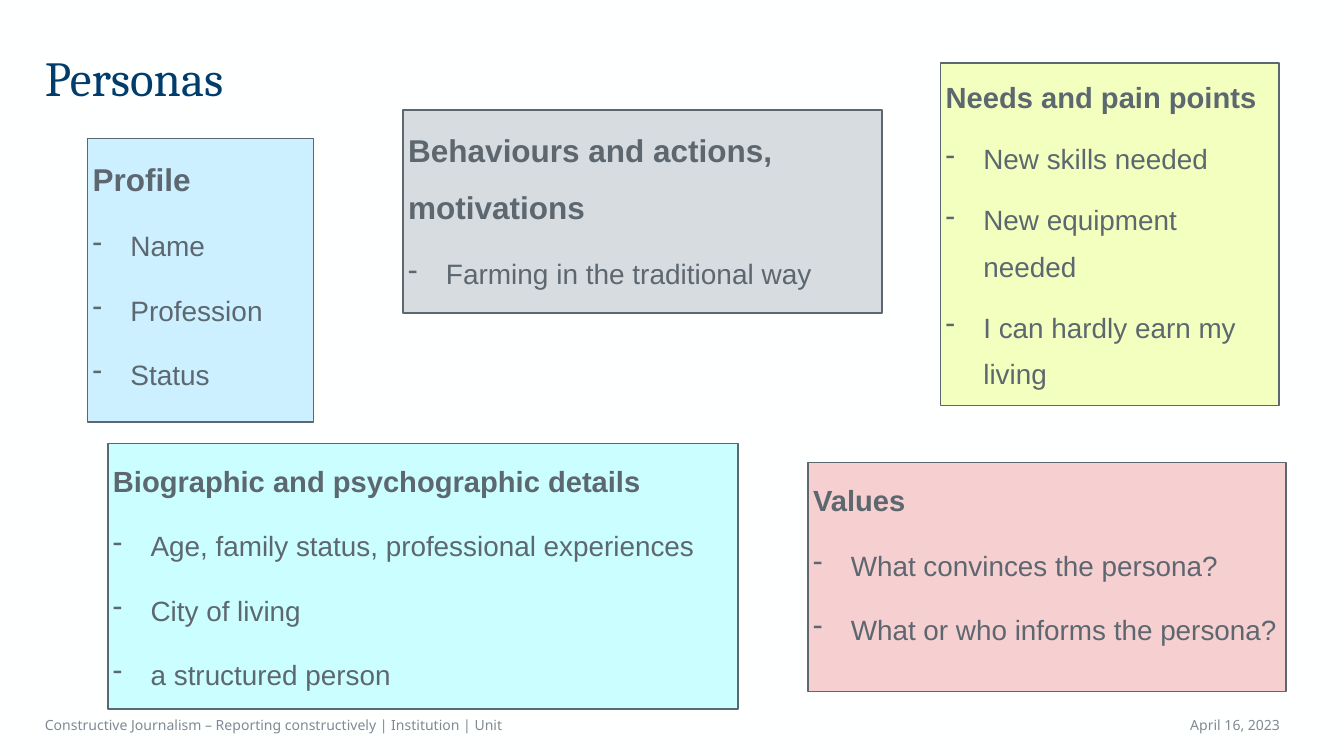
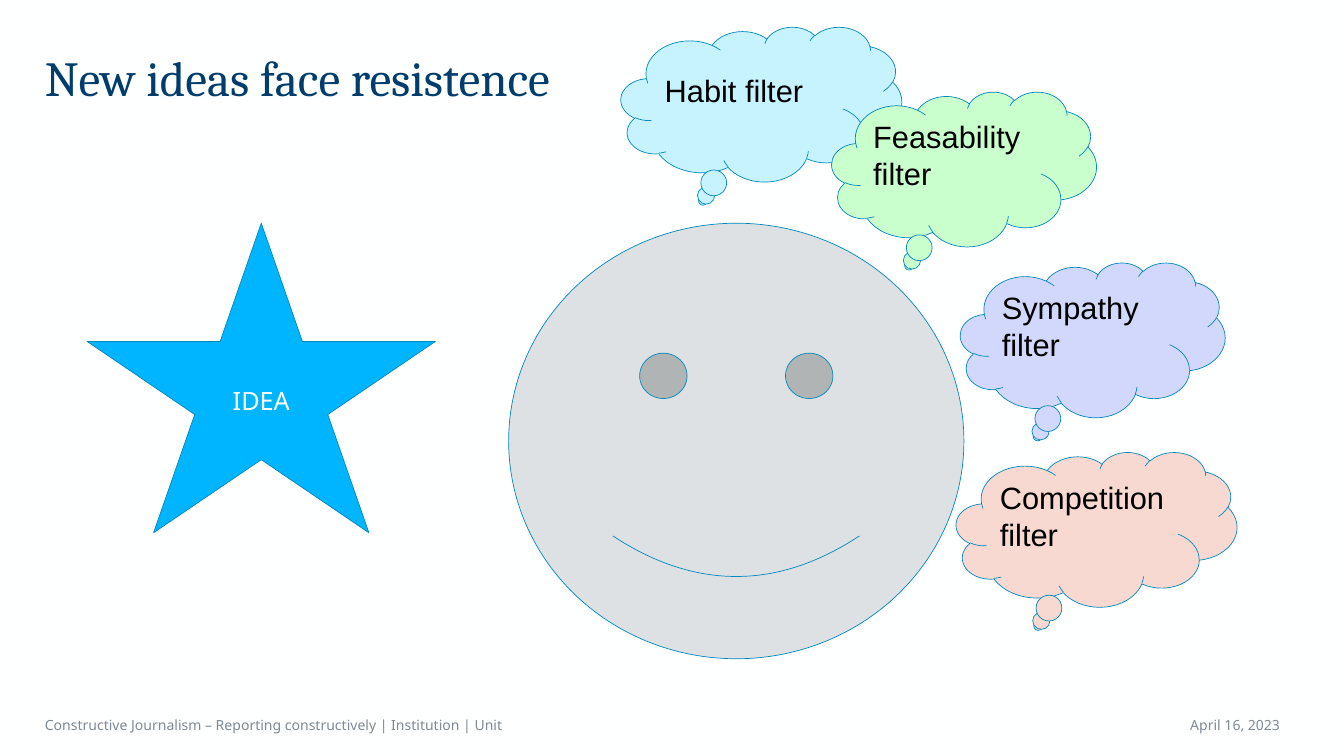
"""Build two workshop slides: persona cards and the filters that new ideas meet."""
from dataclasses import dataclass

from lxml.etree import SubElement
from pptx import Presentation
from pptx.dml.color import RGBColor
from pptx.enum.shapes import MSO_SHAPE as Preset
from pptx.enum.text import MSO_ANCHOR as Anchor, PP_ALIGN as Align
from pptx.oxml.ns import qn
from pptx.util import Cm, Pt


@dataclass(frozen=True)
class Theme:
    paper: str = "FEFFFF"
    navy: str = "003D6D"
    slate: str = "5D676F"
    muted: str = "808A93"
    blue: str = "00B5FF"
    outline: str = "0086BD"
    face: str = "DEE1E3"
    black: str = "000000"
    serif: str = "Cambria"
    sans: str = "Arial"
    humanist: str = "Noto Sans"
    title_size: float = 70
    title_leading: float = 91
    footer_size: float = 20
    idea_size: float = 36
    filter_size: float = 44
    large_card: tuple = (45, 40)
    small_card: tuple = (41.6, 39.8)
    card_line: float = 2.25
    figure_line: float = 1


THEME = Theme()
SLIDE_SIZE = (67.72, 38.1)
TITLE_BOX = (2.01, 2.01, 62.76, 3.25)
FOOTERS = [
    ("Constructive Journalism – Reporting constructively | Institution | Unit",
     (2.01, 35.74, 39.62, 1.6), Align.LEFT),
    ("April 16, 2023", (52.76, 35.74, 11.99, 1.6), Align.RIGHT),
]
PERSONAS_TITLE = "Personas"
PERSONA_CARDS = [
    ("Values", ["What convinces the persona?", "What or who informs the persona?"],
     (40.72, 23.32, 24.08, 11.53), "F6CFD1", THEME.small_card, 1.5),
    ("Biographic and psychographic details",
     ["Age, family status, professional experiences", "City of living", "a structured person"],
     (5.44, 22.35, 31.75, 13.39), "CBFFFF", THEME.small_card, 1.5),
    ("Behaviours and actions, motivations", ["Farming in the traditional way"],
     (20.32, 5.54, 24.13, 10.24), "D6DCE0", THEME.large_card, 1.5),
    ("Profile", ["Name", "Profession", "Status"],
     (4.42, 6.99, 11.38, 14.27), "CCF0FF", THEME.large_card, 1.5),
    ("Needs and pain points",
     ["New skills needed", "New equipment needed", "I can hardly earn my living"],
     (47.4, 3.18, 17.04, 17.25), "F2FFBF", THEME.small_card, 1.4),
]
RESISTANCE_TITLE = "New ideas face resistence"
IDEA, IDEA_BOX = "IDEA", (4.39, 11.25, 17.55, 15.6)
FACE_BOX = (25.63, 11.25, 22.94, 21.95)
CLOUD_HEIGHT = 7.8
FILTERS = [
    ("Competition filter", (48.18, 22.78), 14.15, "F8D9D1"),
    ("Habit filter", (31.29, 1.35), 14.15, "C7F3FF"),
    ("Feasability filter", (41.91, 4.62), 13.34, "C8FFCC"),
    ("Sympathy filter", (48.39, 13.23), 13.34, "D2D7FC"),
]
BULLET_INDENT = 1.9
CARD_GAP = 20
CLOUD_INSETS = (0.13, 1.17)


def place(box):
    return [Cm(length) for length in box]


def write(paragraph, words, size, font, color, bold=False):
    run = paragraph.add_run()
    run.text = words
    run.font.size, run.font.name, run.font.bold = Pt(size), font, bold
    run.font.color.rgb = RGBColor.from_string(color)


def set_frame(frame, anchor):
    frame.word_wrap = True
    frame.vertical_anchor = anchor
    return frame


def add_label(slide, words, box, size, font, color, anchor, align=Align.LEFT):
    frame = set_frame(slide.shapes.add_textbox(*place(box)).text_frame, anchor)
    line = frame.paragraphs[0]
    line.alignment = align
    write(line, words, size, font, color)
    return line


def add_figure(slide, preset, box, fill, outline, width):
    figure = slide.shapes.add_shape(preset, *place(box))
    figure.shadow.inherit = False
    figure.fill.solid()
    figure.fill.fore_color.rgb = RGBColor.from_string(fill)
    figure.line.color.rgb = RGBColor.from_string(outline)
    figure.line.width = Pt(width)
    return figure


def add_bullet(paragraph):
    properties = paragraph._p.get_or_add_pPr()
    properties.set("marL", str(Cm(BULLET_INDENT)))
    properties.set("indent", str(-Cm(BULLET_INDENT)))
    SubElement(properties, qn("a:buChar")).set("char", "-")


def add_card(slide, heading, points, box, fill, sizes, spacing):
    card = add_figure(slide, Preset.RECTANGLE, box, fill, THEME.slate, THEME.card_line)
    frame = set_frame(card.text_frame, Anchor.TOP)
    for index, words in enumerate([heading, *points]):
        is_point = index > 0
        line = frame.add_paragraph() if is_point else frame.paragraphs[0]
        line.alignment = Align.LEFT
        line.line_spacing, line.space_before = spacing, Pt(CARD_GAP)
        if is_point:
            add_bullet(line)
        write(line, words, sizes[is_point], THEME.sans, THEME.slate, not is_point)


def add_filter(slide, words, corner, width, fill):
    cloud = add_figure(slide, Preset.CLOUD_CALLOUT, (*corner, width, CLOUD_HEIGHT),
                       fill, THEME.outline, THEME.figure_line)
    frame = set_frame(cloud.text_frame, Anchor.MIDDLE)
    frame.margin_top, frame.margin_bottom = place(CLOUD_INSETS)
    line = frame.paragraphs[0]
    line.alignment = Align.LEFT
    write(line, words, THEME.filter_size, THEME.sans, THEME.black)


def start_slide(deck, title):
    slide = deck.slides.add_slide(deck.slide_layouts[6])
    slide.background.fill.solid()
    slide.background.fill.fore_color.rgb = RGBColor.from_string(THEME.paper)
    heading = add_label(slide, title, TITLE_BOX, THEME.title_size, THEME.serif,
                        THEME.navy, Anchor.TOP)
    heading.line_spacing = Pt(THEME.title_leading)
    for words, box, align in FOOTERS:
        add_label(slide, words, box, THEME.footer_size, THEME.humanist,
                  THEME.muted, Anchor.MIDDLE, align)
    return slide


def build_personas(deck):
    slide = start_slide(deck, PERSONAS_TITLE)
    for card in PERSONA_CARDS:
        add_card(slide, *card)


def build_resistance(deck):
    slide = start_slide(deck, RESISTANCE_TITLE)
    star = add_figure(slide, Preset.STAR_5_POINT, IDEA_BOX, THEME.blue,
                      THEME.outline, THEME.figure_line)
    idea = set_frame(star.text_frame, Anchor.MIDDLE).paragraphs[0]
    idea.alignment = Align.CENTER
    write(idea, IDEA, THEME.idea_size, THEME.humanist, THEME.paper)
    add_figure(slide, Preset.SMILEY_FACE, FACE_BOX, THEME.face,
               THEME.outline, THEME.figure_line)
    for thought in FILTERS:
        add_filter(slide, *thought)


def main():
    deck = Presentation()
    deck.slide_width, deck.slide_height = place(SLIDE_SIZE)
    build_personas(deck)
    build_resistance(deck)
    deck.save("out.pptx")


if __name__ == "__main__":
    main()
